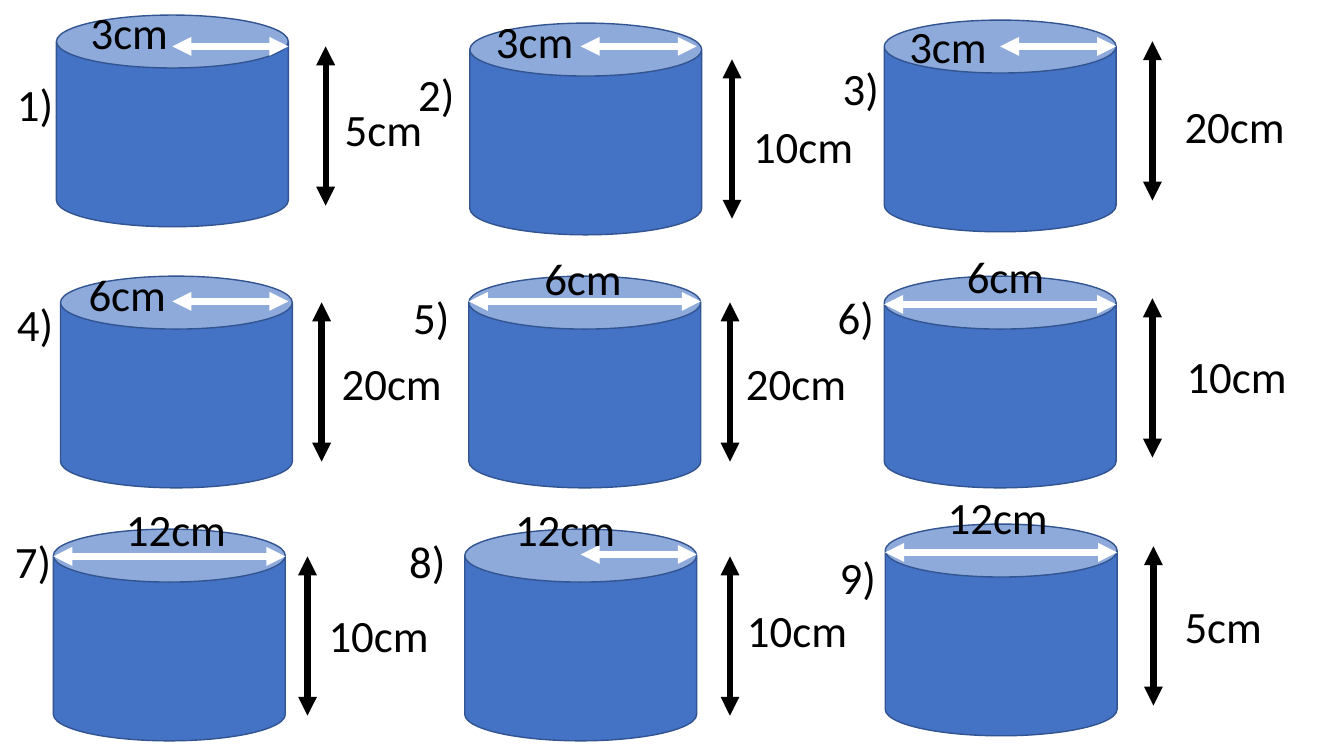
from dataclasses import dataclass

from pptx import Presentation
from pptx.dml.color import RGBColor
from pptx.enum.shapes import MSO_CONNECTOR, MSO_SHAPE
from pptx.enum.text import MSO_AUTO_SIZE
from pptx.oxml.ns import qn
from pptx.util import Pt
from lxml.etree import SubElement

EMU_PER_PX = 9144
COLORS = {"can": "4472C4", "outline": "325491", "span": "FFFFFF", "ink": "000000"}
CAN_WIDTH, CAN_HEIGHT = 230, 210
ARROW_HEIGHT = 158
LABEL_HEIGHT = 64


@dataclass
class Cylinder:
    left: int
    top: int
    span_text: str
    height_text: str
    span_arrow: tuple
    height_arrow: tuple
    span_label: tuple
    height_label: tuple
    number_label: tuple
    is_diameter: bool = False


CYLINDERS = [
    Cylinder(56, 15, "3cm", "5cm", (115, 31), (267, 31), (24, -15), (276, 81), (-49, 56)),
    Cylinder(466, 23, "3cm", "10cm", (110, 23), (260, 36), (16, -14), (271, 90), (-61, 38)),
    Cylinder(877, 20, "3cm", "20cm", (115, 26), (266, 21), (15, -6), (288, 73), (-51, 35)),
    Cylinder(60, 274, "6cm", "20cm", (111, 25), (259, 26), (18, -14), (269, 74), (-53, 15)),
    Cylinder(465, 274, "6cm", "20cm", (0, 25), (259, 26), (65, -30), (265, 74), (-65, 9), True),
    Cylinder(877, 274, "6cm", "10cm", (0, 28), (266, 22), (72, -32), (290, 67), (-56, 9), True),
    Cylinder(53, 525, "12cm", "10cm", (0, 27), (252, 27), (62, -32), (263, 73), (-48, 0), True),
    Cylinder(461, 525, "12cm", "10cm", (115, 25), (263, 27), (40, -32), (270, 68), (-65, 0)),
    Cylinder(878, 520, "12cm", "5cm", (0, 28), (266, 22), (52, -39), (287, 69), (-55, 20), True),
]


def px(length):
    return length * EMU_PER_PX


def color(name):
    return RGBColor.from_string(COLORS[name])


def add_can(slide, left, top):
    can = slide.shapes.add_shape(
        MSO_SHAPE.CAN, px(left), px(top), px(CAN_WIDTH), px(CAN_HEIGHT))
    can.shadow.inherit = False
    can.fill.solid()
    can.fill.fore_color.rgb = color("can")
    can.line.color.rgb = color("outline")
    can.line.width = Pt(1)


def add_arrow(slide, left, top, width, height, color_name):
    arrow = slide.shapes.add_connector(
        MSO_CONNECTOR.STRAIGHT, px(left), px(top), px(left + width), px(top + height))
    arrow.line.color.rgb = color(color_name)
    arrow.line.width = Pt(4.5)
    outline = arrow.line._get_or_add_ln()
    for end in ("a:headEnd", "a:tailEnd"):
        SubElement(outline, qn(end), type="triangle")
    SubElement(arrow._element.spPr, qn("a:effectLst"))


def add_label(slide, left, top, width, text):
    label = slide.shapes.add_textbox(px(left), px(top), px(width), px(LABEL_HEIGHT))
    frame = label.text_frame
    frame.word_wrap = True
    frame.auto_size = MSO_AUTO_SIZE.SHAPE_TO_FIT_TEXT
    paragraph = frame.paragraphs[0]
    paragraph.text = text
    paragraph.font.name = "Calibri"
    paragraph.font.size = Pt(32)
    paragraph.font.color.rgb = color("ink")


def add_cylinder(slide, number, cylinder):
    def place(offset):
        return cylinder.left + offset[0], cylinder.top + offset[1]

    span = CAN_WIDTH if cylinder.is_diameter else CAN_WIDTH // 2
    add_can(slide, cylinder.left, cylinder.top)
    add_arrow(slide, *place(cylinder.span_arrow), span, 0, "span")
    add_arrow(slide, *place(cylinder.height_arrow), 0, ARROW_HEIGHT, "ink")
    add_label(slide, *place(cylinder.span_label), 131, cylinder.span_text)
    add_label(slide, *place(cylinder.height_label), 131, cylinder.height_text)
    add_label(slide, *place(cylinder.number_label), 64, f"{number})")


def main():
    presentation = Presentation()
    presentation.slide_width = px(1333)
    presentation.slide_height = px(750)
    slide = presentation.slides.add_slide(presentation.slide_layouts[6])
    for number, cylinder in enumerate(CYLINDERS, start=1):
        add_cylinder(slide, number, cylinder)
    presentation.save("out.pptx")


if __name__ == "__main__":
    main()
